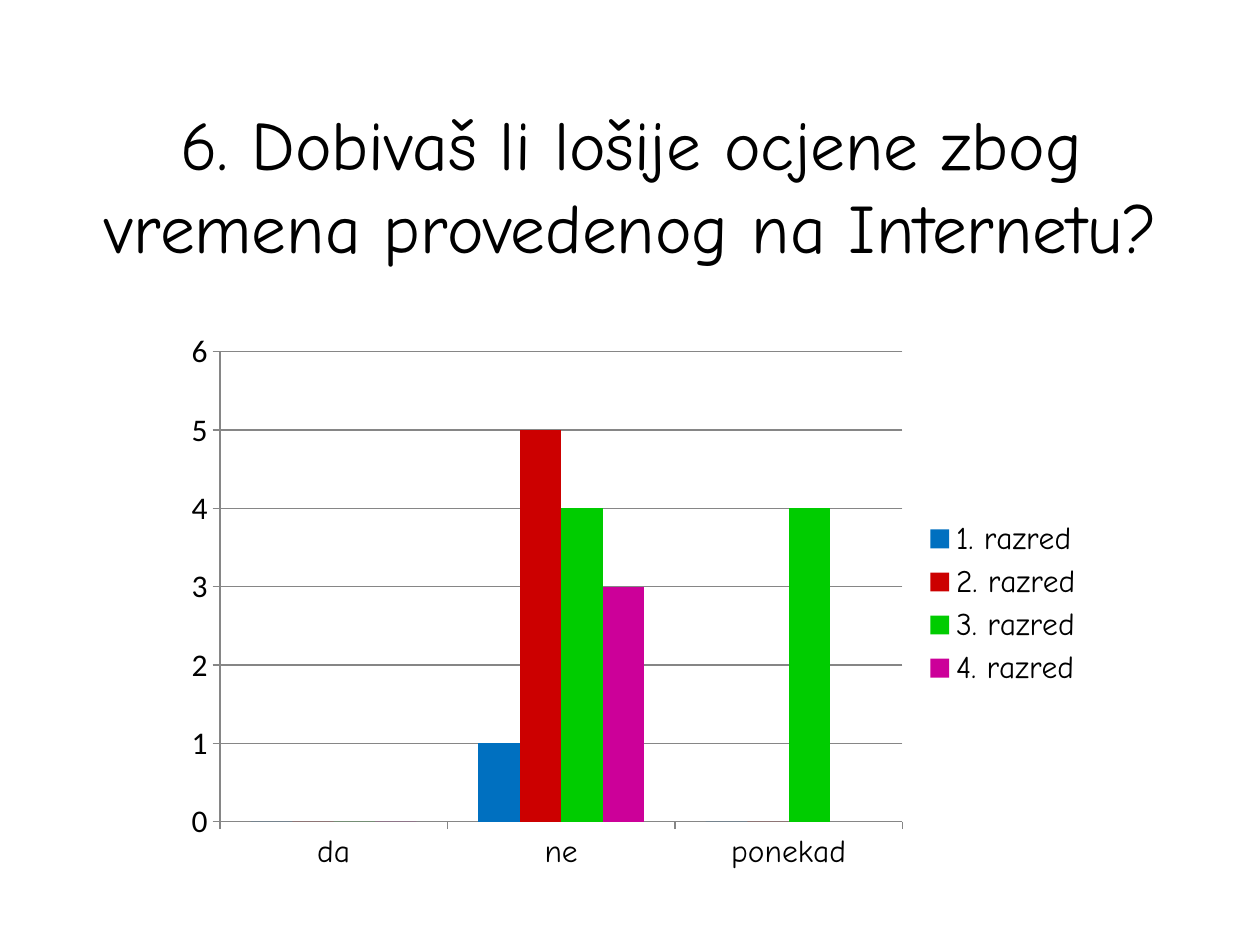
from lxml import etree
from pptx import Presentation
from pptx.chart.data import CategoryChartData
from pptx.dml.color import RGBColor
from pptx.enum.chart import XL_CHART_TYPE, XL_LEGEND_POSITION, XL_TICK_MARK
from pptx.enum.text import MSO_ANCHOR, PP_ALIGN
from pptx.oxml.ns import qn
from pptx.util import Inches, Pt

COLORS = {
    "text": "000000",
    "axis": "868686",
    "1. razred": "0070C0",
    "2. razred": "CC0000",
    "3. razred": "00CC00",
    "4. razred": "CC0099",
}
HEADING_FONT = "Comic Neue"
NUMBER_FONT = "Calibri"


def color(name):
    return RGBColor.from_string(COLORS[name])


def add_text(slide, text, left, top, width, height, size, font, align):
    box = slide.shapes.add_textbox(Inches(left), Inches(top), Inches(width), Inches(height))
    frame = box.text_frame
    frame.word_wrap = True
    frame.vertical_anchor = MSO_ANCHOR.MIDDLE
    paragraph = frame.paragraphs[0]
    paragraph.alignment = align
    run = paragraph.add_run()
    run.text = text
    run.font.size = Pt(size)
    run.font.name = font
    run.font.color.rgb = color("text")


prs = Presentation()
prs.slide_width, prs.slide_height = Inches(10), Inches(7.5)
slide = prs.slides.add_slide(prs.slide_layouts[6])

# Question
add_text(slide, "6. Dobivaš li lošije ocjene zbog vremena provedenog na Internetu?",
         left=0.51, top=0.84, width=9, height=1.25,
         size=39.6, font=HEADING_FONT, align=PP_ALIGN.CENTER)

# Answers by class
answers = CategoryChartData()
answers.categories = ["da", "ne", "ponekad"]
answers.add_series("1. razred", (0, 1, 0))
answers.add_series("2. razred", (0, 5, 0))
answers.add_series("3. razred", (0, 4, 4))
answers.add_series("4. razred", (0, 3, None))
chart = slide.shapes.add_chart(
    XL_CHART_TYPE.COLUMN_CLUSTERED,
    Inches(1.38), Inches(2.57), Inches(7.32), Inches(4.44), answers).chart
chart.has_title = False

# Columns
columns = chart.plots[0]
columns.gap_width = 150
columns.overlap = 0
columns.vary_by_categories = False
for grade in columns.series:
    grade.invert_if_negative = False
    grade.format.fill.solid()
    grade.format.fill.fore_color.rgb = color(grade.name)

# Axes and legend
answer_axis, count_axis = chart.category_axis, chart.value_axis
count_axis.minimum_scale, count_axis.maximum_scale = 0, 6
count_axis.major_unit = 1
count_axis.has_major_gridlines = True
for axis in (answer_axis, count_axis):
    axis.major_tick_mark = XL_TICK_MARK.OUTSIDE
for outline in (answer_axis.format.line, count_axis.format.line,
                count_axis.major_gridlines.format.line):
    outline.color.rgb = color("axis")
    outline.width = Pt(0.75)

chart.has_legend = True
chart.legend.position = XL_LEGEND_POSITION.RIGHT
chart.legend.include_in_layout = False

for font, face in ((chart.font, NUMBER_FONT),
                   (count_axis.tick_labels.font, NUMBER_FONT),
                   (answer_axis.tick_labels.font, HEADING_FONT),
                   (chart.legend.font, HEADING_FONT)):
    font.name = face
    font.size = Pt(18)
    font.color.rgb = color("text")

# Plot area as shares of the chart frame
plot_area = chart._chartSpace.find(".//" + qn("c:plotArea"))
for old_layout in plot_area.findall(qn("c:layout")):
    plot_area.remove(old_layout)
layout = etree.Element(qn("c:layout"))
manual = etree.SubElement(layout, qn("c:manualLayout"))
for tag, value in (("layoutTarget", "inner"), ("xMode", "edge"), ("yMode", "edge"),
                   ("x", "0.05"), ("y", "0.05"), ("w", "0.74"), ("h", "0.84")):
    etree.SubElement(manual, qn("c:" + tag)).set("val", value)
plot_area.insert(0, layout)

prs.save("out.pptx")
